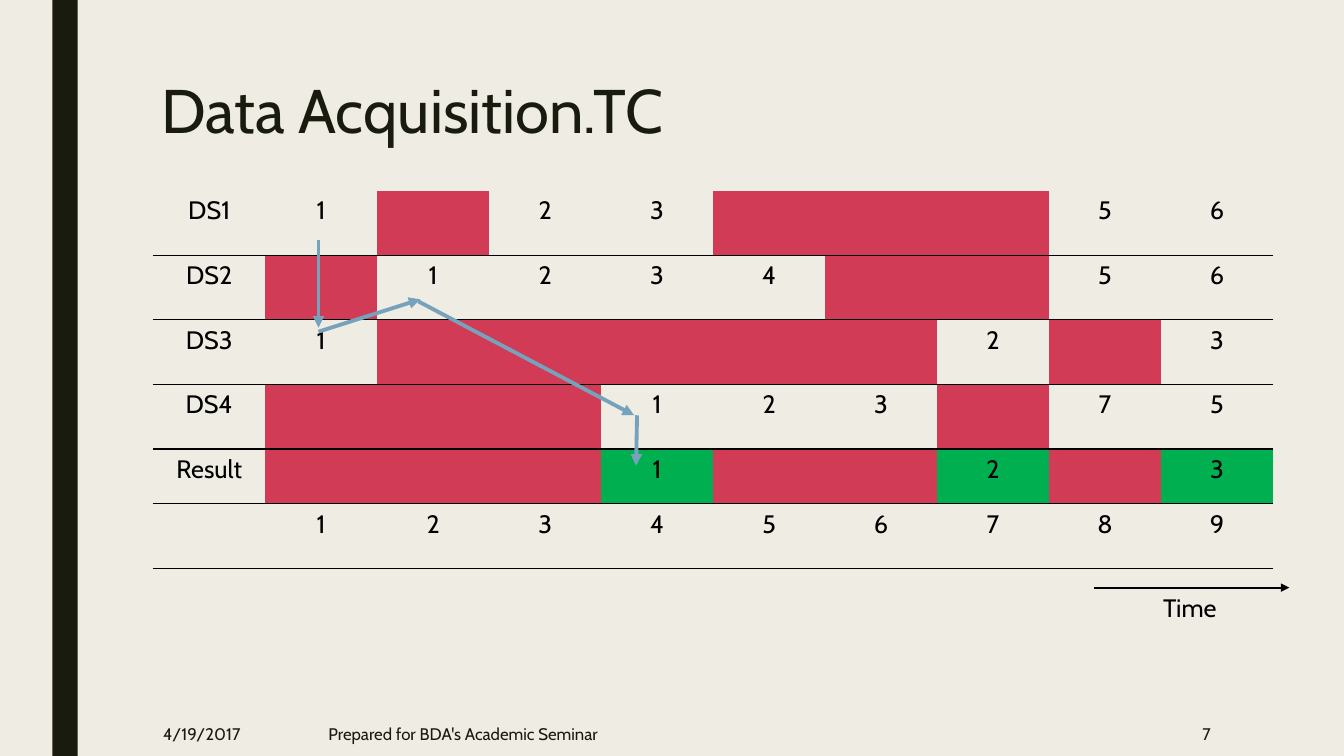
"""Builds the data acquisition slide: source streams merged over time."""
from lxml import etree
from pptx import Presentation
from pptx.dml.color import RGBColor
from pptx.enum.shapes import MSO_CONNECTOR, MSO_SHAPE
from pptx.enum.text import MSO_ANCHOR, PP_ALIGN
from pptx.oxml.ns import qn
from pptx.util import Inches, Pt

STRAIGHT = MSO_CONNECTOR.STRAIGHT
RECTANGLE = MSO_SHAPE.RECTANGLE
TOP, MIDDLE = MSO_ANCHOR.TOP, MSO_ANCHOR.MIDDLE
LEFT, CENTER, RIGHT = PP_ALIGN.LEFT, PP_ALIGN.CENTER, PP_ALIGN.RIGHT

COLORS = {
    "paper": "EFEDE3",
    "ink": "191B0E",
    "black": "000000",
    "missing": "D13B56",
    "result": "00B050",
    "flow": "77A2BB",
}
BLANK_LAYOUT = 6
COLUMN_WIDTH = 100 / 12
ROW_HEIGHT, RESULT_HEIGHT = 8.55, 7.27
FOOTER_TOP, FOOTER_HEIGHT = 94.13, 5.87

STREAMS = [
    ["DS1", "1", None, "2", "3", None, None, None, "5", "6"],
    ["DS2", None, "1", "2", "3", "4", None, None, "5", "6"],
    ["DS3", "1", None, None, None, None, None, "2", None, "3"],
    ["DS4", None, None, None, "1", "2", "3", None, "7", "5"],
    ["Result", None, None, None, "1", None, None, "2", None, "3"],
    ["", *map(str, range(1, 10))],
]
FOOTERS = [
    ("4/19/2017", 11.4, 9.9, LEFT),
    ("Prepared for BDA's Academic Seminar", 23.7, 51.53, LEFT),
    ("7", 77.7, 13.13, RIGHT),
]
FLOW = [
    ((23.7, 31.73), (23.7, 43.33)),
    ((23.7, 43.87), (31.28, 39.6)),
    ((31.13, 39.87), (47.18, 54.93)),
    ((47.4, 54.93), (47.33, 61.6)),
]


def color(name):
    return RGBColor.from_string(COLORS[name])


def write(frame, text, size=18, ink="black", align=LEFT, spacing=None):
    para = frame.paragraphs[0]
    para.alignment = align
    para.line_spacing = spacing
    span = para.add_run()
    span.text = text
    span.font.name = "Cabin"
    span.font.size = Pt(size)
    span.font.color.rgb = color(ink)


class Page:
    """Draws on one slide, with lengths in percent of its size."""

    def __init__(self, deck):
        self.width, self.height = deck.slide_width, deck.slide_height
        self.slide = deck.slides.add_slide(deck.slide_layouts[BLANK_LAYOUT])
        self.slide.background.fill.solid()
        self.slide.background.fill.fore_color.rgb = color("paper")

    def across(self, share):
        return round(self.width * share / 100)

    def down(self, share):
        return round(self.height * share / 100)

    def area(self, left, top, width, height):
        return self.across(left), self.down(top), self.across(width), self.down(height)

    def bar(self, *area, fill):
        shape = self.slide.shapes.add_shape(RECTANGLE, *self.area(*area))
        shape.shadow.inherit = False
        shape.fill.solid()
        shape.fill.fore_color.rgb = color(fill)
        shape.line.fill.background()

    def text(self, text, *area, anchor=TOP, **style):
        frame = self.slide.shapes.add_textbox(*self.area(*area)).text_frame
        frame.word_wrap = True
        frame.vertical_anchor = anchor
        write(frame, text, **style)

    def arrow(self, start, end, ink, weight):
        line = self.slide.shapes.add_connector(
            STRAIGHT, self.across(start[0]), self.down(start[1]),
            self.across(end[0]), self.down(end[1]))
        line.line.color.rgb = color(ink)
        line.line.width = Pt(weight)
        etree.SubElement(line.line._get_or_add_ln(), qn("a:tailEnd"), type="triangle")
        etree.SubElement(line._element.spPr, qn("a:effectLst"))

    def border(self, cell, ruled_sides):
        properties = cell._tc.get_or_add_tcPr()
        for side in ("lnL", "lnR", "lnT", "lnB"):
            edge = etree.SubElement(properties, qn(f"a:{side}"), w=str(Pt(1)))
            if side in ruled_sides:
                fill = etree.SubElement(edge, qn("a:solidFill"))
                etree.SubElement(fill, qn("a:srgbClr"), val=COLORS["black"])
            else:
                etree.SubElement(edge, qn("a:noFill"))

    def cell(self, cell, text, fill, ruled_sides):
        self.border(cell, ruled_sides)
        if fill:
            cell.fill.solid()
            cell.fill.fore_color.rgb = color(fill)
        else:
            cell.fill.background()
        if text:
            write(cell.text_frame, text, align=CENTER)

    def table(self, left, top, rows, heights):
        columns = len(rows[0])
        area = self.area(left, top, columns * COLUMN_WIDTH, sum(heights))
        table = self.slide.shapes.add_table(len(rows), columns, *area).table
        table.first_row = table.horz_banding = False
        for column in table.columns:
            column.width = self.across(COLUMN_WIDTH)
        for index, (values, height) in enumerate(zip(rows, heights)):
            table.rows[index].height = self.down(height)
            ruled_sides = ("lnT", "lnB") if index else ("lnB",)
            for place, value in enumerate(values):
                fill = "missing" if value is None else None
                if value and place and values[0] == "Result":
                    fill = "result"
                self.cell(table.cell(index, place), value, fill, ruled_sides)


def main():
    deck = Presentation()
    deck.slide_width, deck.slide_height = Inches(13.33), Inches(7.5)
    page = Page(deck)
    page.bar(3.9, 0, 1.88, 100, fill="ink")
    page.text("Data Acquisition.TC", 11.25, 10, 78.75, 21.6,
              size=44, ink="ink", spacing=0.89)
    for text, left, width, align in FOOTERS:
        page.text(text, left, FOOTER_TOP, width, FOOTER_HEIGHT,
                  anchor=MIDDLE, size=12, ink="ink", align=align)
    heights = [RESULT_HEIGHT if row[0] == "Result" else ROW_HEIGHT for row in STREAMS]
    page.table(11.4, 25.2, STREAMS, heights)
    page.arrow((81.38, 77.73), (95.93, 77.73), "black", 1.5)
    page.text("Time", 85.8, 77.73, 5.7, 5.33)
    for start, end in FLOW:
        page.arrow(start, end, "flow", 2.75)
    deck.save("out.pptx")


if __name__ == "__main__":
    main()
